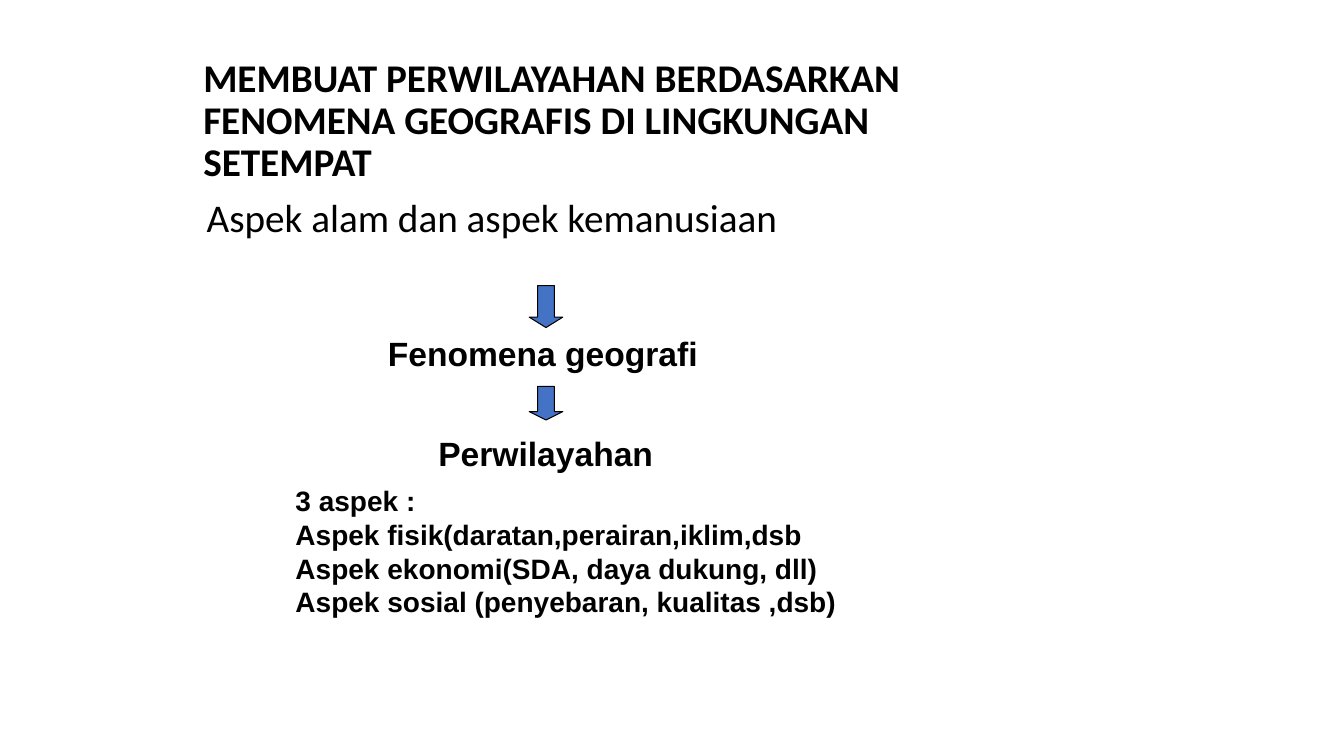
from lxml.etree import SubElement
from pptx import Presentation
from pptx.dml.color import RGBColor
from pptx.enum.shapes import MSO_SHAPE as Shape
from pptx.enum.text import MSO_ANCHOR as Anchor, MSO_AUTO_SIZE as Fit, PP_ALIGN as Align
from pptx.oxml.ns import qn
from pptx.util import Inches, Pt

BLACK = RGBColor(0x00, 0x00, 0x00)
BLUE = RGBColor(0x44, 0x72, 0xC4)
UNIT = Inches(1) / 12
COLS, ROWS = 160, 90
TITLE = "MEMBUAT PERWILAYAHAN BERDASARKAN FENOMENA GEOGRAFIS DI LINGKUNGAN SETEMPAT"
ASPECTS = [
    "3 aspek :",
    "Aspek fisik(daratan,perairan,iklim,dsb",
    "Aspek ekonomi(SDA, daya dukung, dll)",
    "Aspek sosial (penyebaran, kualitas ,dsb)",
]


def grid(*cells):
    """Turn grid cells into slide lengths."""
    return [round(cell * UNIT) for cell in cells]


def style(para, size, face, bold):
    """Set the font of a paragraph's runs."""
    for run in para.runs:
        font = run.font
        font.size, font.name, font.bold = Pt(size), face, bold
        font.color.rgb = BLACK


def indent(para, inches):
    """Give a paragraph a hanging indent without a bullet."""
    props = para._p.get_or_add_pPr()
    props.set("marL", str(Inches(inches)))
    props.set("indent", str(-Inches(inches)))
    SubElement(props, qn("a:buNone"))


def holder(shape, box, text, bold, anchor):
    """Place and fill a title or body placeholder."""
    shape.left, shape.top, shape.width, shape.height = grid(*box)
    frame = shape.text_frame
    frame.text = text
    frame.auto_size, frame.vertical_anchor = Fit.NONE, anchor
    para = frame.paragraphs[0]
    para.alignment, para.line_spacing, para.space_before = Align.LEFT, 0.9, Pt(0)
    style(para, 28, "Calibri", bold)
    return para


def label(slide, box, lines, size, hang=0, wrap=True):
    """Add a bold text box with one paragraph per line."""
    frame = slide.shapes.add_textbox(*grid(*box)).text_frame
    frame.text = "\n".join(lines)
    frame.word_wrap, frame.auto_size = wrap, Fit.SHAPE_TO_FIT_TEXT
    for para in frame.paragraphs:
        if hang:
            indent(para, hang)
        style(para, size, "Arial", True)


def arrow(slide, box, head):
    """Add a blue arrow that points down."""
    shape = slide.shapes.add_shape(Shape.DOWN_ARROW, *grid(*box))
    shape.adjustments[1] = head
    shape.shadow.inherit = False
    shape.fill.solid()
    shape.fill.fore_color.rgb = BLUE
    shape.line.color.rgb = BLACK
    shape.line.width = Pt(0.75)


def flow(slide, left, top):
    """Draw the steps from aspects to regions below a corner."""
    arrow(slide, (left + 29, top, 4, 5), 0.31)
    label(slide, (left + 11, top + 5, 42, 6), ["Fenomena geografi"], 24)
    arrow(slide, (left + 29, top + 12, 4, 4), 0.25)
    label(slide, (left + 17, top + 17, 28, 6), ["Perwilayahan"], 24, wrap=False)
    label(slide, (left, top + 23, 71, 17.2), ASPECTS, 20, hang=0.38)


def main():
    """Build and save the slide."""
    deck = Presentation()
    deck.slide_width, deck.slide_height = grid(COLS, ROWS)
    slide = deck.slides.add_slide(deck.slide_layouts[1])
    title, body = slide.placeholders
    holder(title, (23, 3, 100, 23), TITLE, True, Anchor.MIDDLE)
    para = holder(body, (23.4, 23, 97, 57), "Aspek alam dan aspek kemanusiaan", False, Anchor.TOP)
    indent(para, 0.25)
    flow(slide, 34, 34)
    deck.save("out.pptx")


if __name__ == "__main__":
    main()
